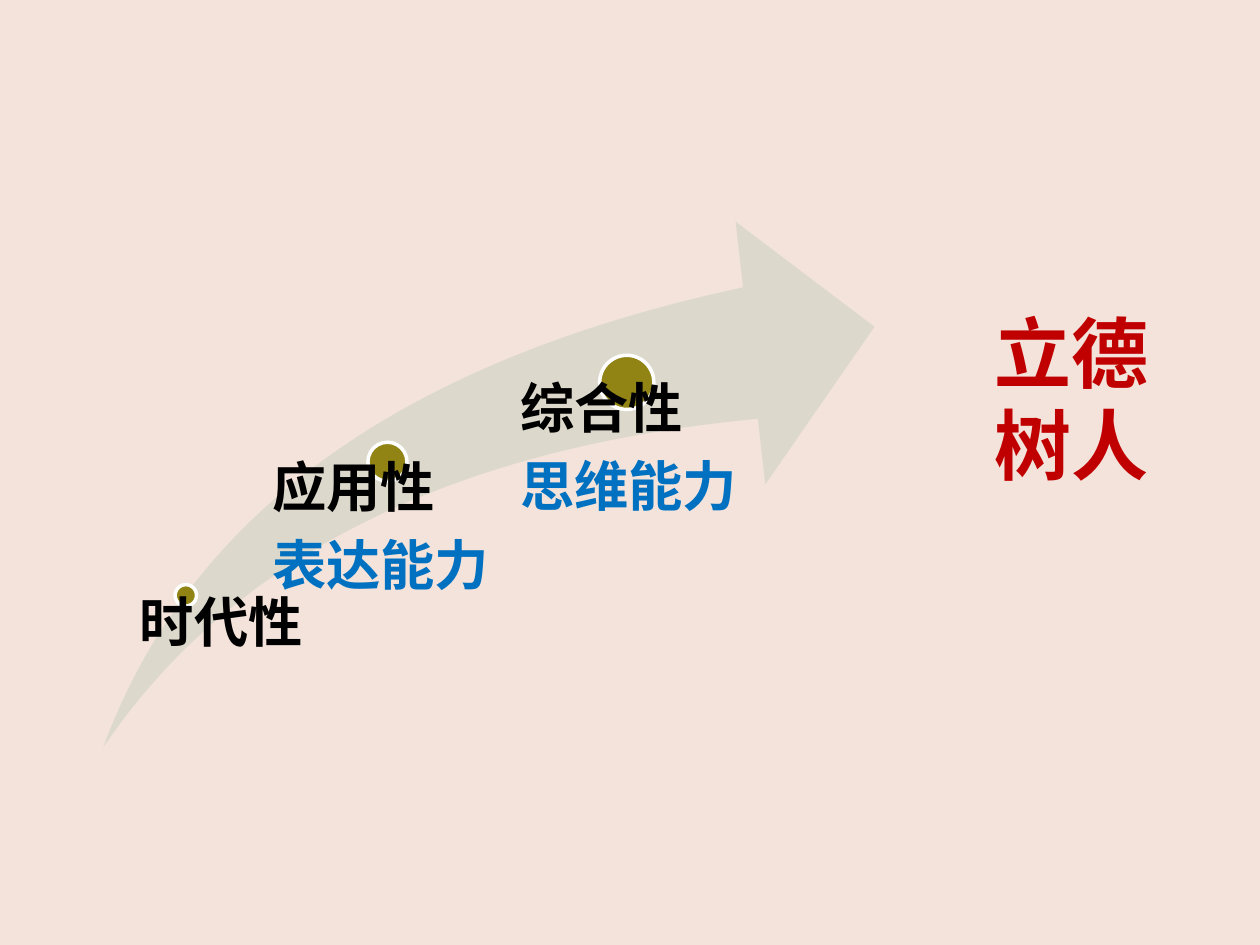
from pptx import Presentation
from pptx.dml.color import RGBColor
from pptx.enum.shapes import MSO_SHAPE
from pptx.enum.text import MSO_ANCHOR, MSO_AUTO_SIZE, PP_ALIGN
from pptx.util import Inches, Pt

ARROW, DOT = MSO_SHAPE.SWOOSH_ARROW, MSO_SHAPE.OVAL
TOP, BOTTOM = MSO_ANCHOR.TOP, MSO_ANCHOR.BOTTOM
LEFT, CENTER = PP_ALIGN.LEFT, PP_ALIGN.CENTER
NO_AUTOFIT = MSO_AUTO_SIZE.NONE

BACKGROUND = RGBColor(0xF3, 0xE3, 0xDA)
SWOOSH = RGBColor(0xDC, 0xD9, 0xCC)
OLIVE = RGBColor(0x91, 0x84, 0x15)
WHITE = RGBColor(0xFF, 0xFF, 0xFF)
BLACK = RGBColor(0x00, 0x00, 0x00)
BLUE = RGBColor(0x00, 0x70, 0xC0)
RED = RGBColor(0xC0, 0x00, 0x00)

FONT = "Roboto"
TITLE_SIZE, LABEL_SIZE = 44, 31
LABEL_COLORS = (BLACK, BLUE)

# Dot (left, top, diameter), label box, left inset, label lines
STAGES = [
    ((1.39, 4.64, 0.17), (1.02, 4.73, 2.46, 1.2), 0.09, ["时代性"]),
    ((2.92, 3.51, 0.31), (1.99, 3.66, 3.78, 2.27), 0.17, ["应用性", "表达能力"]),
    ((4.76, 2.82, 0.43), (3.9, 3.03, 3.76, 2.9), 0.23, ["综合性", "思维能力"]),
]


def apply_format(target, values):
    for name, value in values.items():
        setattr(target, name, value)


def write_paragraph(paragraph, text, size, color, layout):
    apply_format(paragraph, layout)
    run = paragraph.add_run()
    run.text = text
    apply_format(run.font, {"name": FONT, "size": Pt(size), "bold": True})
    run.font.color.rgb = color


def add_title(slide, text):
    title = slide.shapes.title
    apply_format(title, {"left": Inches(7.76), "top": Inches(1.86),
                         "width": Inches(1.49), "height": Inches(2.08)})
    apply_format(title.text_frame, {"word_wrap": True, "auto_size": NO_AUTOFIT,
                                    "vertical_anchor": BOTTOM})
    write_paragraph(title.text_frame.paragraphs[0], text, TITLE_SIZE, RED,
                    {"alignment": CENTER})


def add_filled_shape(slide, kind, box, fill, outline=None):
    shape = slide.shapes.add_shape(kind, *map(Inches, box))
    shape.shadow.inherit = False
    shape.fill.solid()
    shape.fill.fore_color.rgb = fill
    if outline is None:
        shape.line.fill.background()
    else:
        shape.line.color.rgb = outline
        shape.line.width = Pt(2)
    return shape


def add_label(slide, box, inset, lines):
    frame = slide.shapes.add_textbox(*map(Inches, box)).text_frame
    apply_format(frame, {"word_wrap": True, "auto_size": NO_AUTOFIT,
                         "vertical_anchor": TOP, "margin_left": Inches(inset),
                         "margin_top": 0, "margin_right": 0, "margin_bottom": 0})
    layout = {"alignment": LEFT, "line_spacing": 0.9,
              "space_after": Pt(0.35 * LABEL_SIZE)}
    for index, (text, color) in enumerate(zip(lines, LABEL_COLORS)):
        paragraph = frame.add_paragraph() if index else frame.paragraphs[0]
        write_paragraph(paragraph, text, LABEL_SIZE, color, layout)


def main():
    presentation = Presentation()
    apply_format(presentation, {"slide_width": Inches(10),
                                "slide_height": Inches(7.5)})
    slide = presentation.slides.add_slide(presentation.slide_layouts[5])
    slide.background.fill.solid()
    slide.background.fill.fore_color.rgb = BACKGROUND

    add_title(slide, "立德树人")

    # Rising arrow
    arrow = add_filled_shape(slide, ARROW, (0.82, 1.76, 6.12, 4.17), SWOOSH)
    arrow.adjustments[0] = 0.25
    arrow.adjustments[1] = 0.25

    # Stages along the arrow
    for (left, top, diameter), box, inset, lines in STAGES:
        add_filled_shape(slide, DOT, (left, top, diameter, diameter), OLIVE, WHITE)
        add_label(slide, box, inset, lines)

    presentation.save("out.pptx")


if __name__ == "__main__":
    main()
